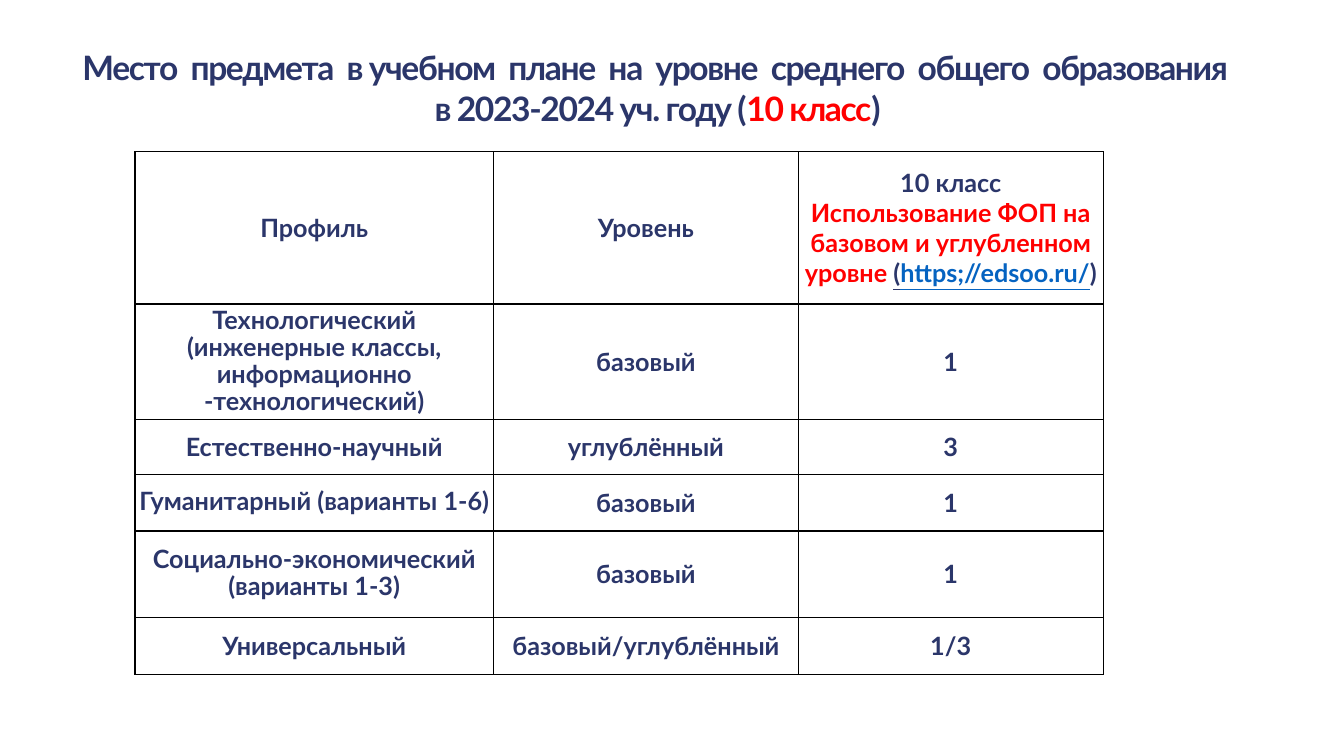
"""Build the slide on the subject's place in the grade 10 curriculum."""
from lxml.etree import SubElement
from pptx import Presentation
from pptx.dml.color import RGBColor
from pptx.enum.text import MSO_ANCHOR, MSO_AUTO_SIZE, PP_ALIGN
from pptx.oxml.ns import qn
from pptx.util import Cm, Pt

NAVY, RED, BLUE, BLACK = "2B366A", "FF0000", "0563C1", "000000"

TITLE = [
    ("Место  предмета  в учебном  плане  на  уровне  среднего  общего  "
     "образования  в 2023-2024 уч. году (", NAVY, False),
    ("10 класс", RED, False),
    (")", NAVY, False),
]
GRADE = [
    [("10 класс", NAVY, False)],
    [("Использование ФОП на базовом и углубленном уровне ", RED, False),
     ("(", NAVY, True),
     ("https;//edsoo.ru/", BLUE, True),
     (")", NAVY, False)],
]
ROWS = [
    ("Профиль", "Уровень", GRADE),
    ("Технологический (инженерные классы, информационно -технологический)",
     "базовый", "1"),
    ("Естественно-научный", "углублённый", "3"),
    ("Гуманитарный (варианты 1-6)", "базовый", "1"),
    ("Социально-экономический (варианты 1-3)", "базовый", "1"),
    ("Универсальный", "базовый/углублённый", "1/3"),
]
WIDTHS = [9.04, 7.68, 7.68]
HEIGHTS = [3.84, 2.92, 1.37, 1.43, 2.17, 1.45]
LEADS = {1: 19.2, 3: 19.2, 4: 19.4}


def paint(color, value):
    color.rgb = RGBColor.from_string(value)


def write(para, runs, size, track=0):
    para.alignment = PP_ALIGN.CENTER
    for text, color, line in runs:
        run = para.add_run()
        run.text = text
        font = run.font
        font.name, font.size, font.bold = "Lato", Pt(size), True
        font.underline = line
        paint(font.color, color)
        if track:
            font._element.set("spc", str(track * 100))


def border(cell):
    props = cell._tc.get_or_add_tcPr()
    for side in ("lnL", "lnR", "lnT", "lnB"):
        line = SubElement(props, qn(f"a:{side}"), w=str(Pt(1)))
        fill = SubElement(line, qn("a:solidFill"))
        SubElement(fill, qn("a:srgbClr"), val=BLACK)


def fill_cell(cell, text, lead):
    paras = [[(text, NAVY, False)]] if isinstance(text, str) else text
    cell.margin_left = cell.margin_right = 0
    cell.margin_top = cell.margin_bottom = 0
    cell.vertical_anchor = MSO_ANCHOR.MIDDLE
    frame = cell.text_frame
    for i, runs in enumerate(paras):
        para = frame.add_paragraph() if i else frame.paragraphs[0]
        write(para, runs, 18)
        if lead:
            para.line_spacing = Pt(lead)
    border(cell)
    cell.fill.background()


def add_title(slide):
    title = slide.shapes.title
    title.left, title.top = Cm(1.98), Cm(1.19)
    title.width, title.height = Cm(29.18), Cm(2.62)
    frame = title.text_frame
    frame.margin_left = frame.margin_right = 0
    frame.margin_top = frame.margin_bottom = 0
    frame.auto_size = MSO_AUTO_SIZE.NONE
    frame.vertical_anchor = MSO_ANCHOR.TOP
    frame.word_wrap = True
    write(frame.paragraphs[0], TITLE, 24, -1)


def add_grid(slide):
    table = slide.shapes.add_table(
        len(ROWS), len(WIDTHS), Cm(3.4), Cm(3.82),
        Cm(sum(WIDTHS)), Cm(sum(HEIGHTS))).table
    table.first_row = table.horz_banding = False
    for col, width in zip(table.columns, WIDTHS):
        col.width = Cm(width)
    for r, (row, height) in enumerate(zip(ROWS, HEIGHTS)):
        table.rows[r].height = Cm(height)
        for c, text in enumerate(row):
            lead = LEADS.get(r) if c == 0 else None
            fill_cell(table.cell(r, c), text, lead)


def main():
    deck = Presentation()
    deck.slide_width, deck.slide_height = Cm(33.87), Cm(19.05)
    slide = deck.slides.add_slide(deck.slide_layouts[5])
    add_title(slide)
    add_grid(slide)
    deck.save("out.pptx")


if __name__ == "__main__":
    main()
